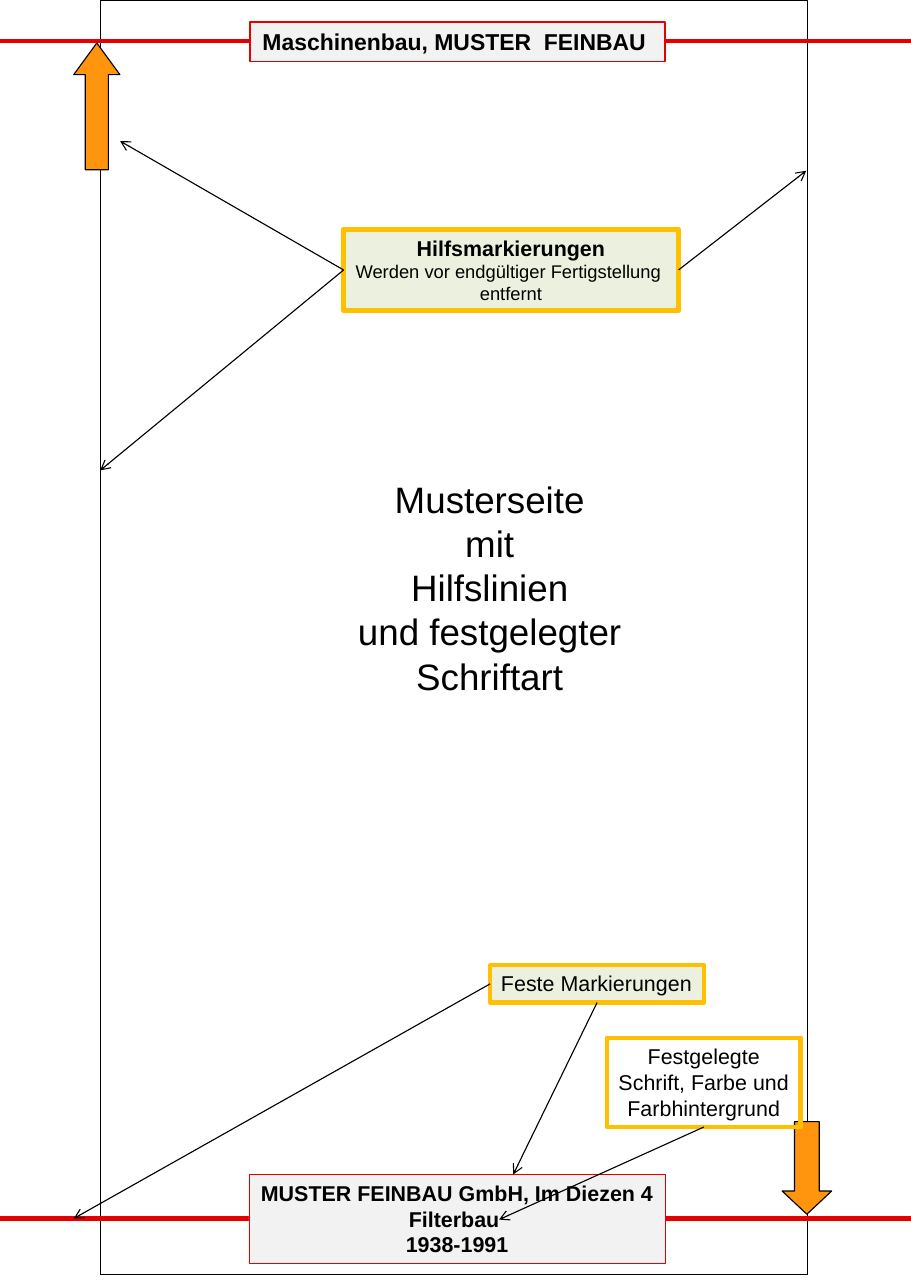
from dataclasses import dataclass

from lxml import etree
from pptx import Presentation
from pptx.dml.color import RGBColor
from pptx.enum.dml import MSO_LINE
from pptx.enum.shapes import MSO_CONNECTOR, MSO_SHAPE
from pptx.enum.text import MSO_ANCHOR, MSO_AUTO_SIZE, PP_ALIGN
from pptx.oxml.ns import qn
from pptx.util import Pt

CENTER, LEFT = PP_ALIGN.CENTER, PP_ALIGN.LEFT
TOP = MSO_ANCHOR.TOP
GROW, FIXED = MSO_AUTO_SIZE.SHAPE_TO_FIT_TEXT, MSO_AUTO_SIZE.NONE
STRAIGHT = MSO_CONNECTOR.STRAIGHT
RECT, UP, DOWN = MSO_SHAPE.RECTANGLE, MSO_SHAPE.UP_ARROW, MSO_SHAPE.DOWN_ARROW
DOTTED = MSO_LINE.ROUND_DOT
SIDE_LEFT, SIDE_BOTTOM, SIDE_RIGHT = 1, 2, 3

FONT = "Arial"
COLORS = {
    "black": "000000", "white": "FFFFFF", "red": "E60000", "grey": "F2F2F2",
    "orange": "FF950E", "green": "EBF1DE", "gold": "FFC000",
}


@dataclass
class Line:
    text: str
    size: float = 14
    bold: bool = False


@dataclass
class Box:
    at: tuple[float, float, float, float]
    lines: list[Line]
    fill: str | None
    line: str
    width: float
    align: int = CENTER


@dataclass
class BlockArrow:
    kind: int
    at: tuple[float, float, float, float]
    head: float


@dataclass
class Pointer:
    box: str
    side: int
    end: tuple[float, float]


def rgb(name: str) -> RGBColor:
    return RGBColor.from_string(COLORS[name])


def write(tf, lines: list[Line], align: int) -> None:
    tf.word_wrap = False
    tf.vertical_anchor = TOP
    for i, line in enumerate(lines):
        p = tf.add_paragraph() if i else tf.paragraphs[0]
        p.alignment = align
        r = p.add_run()
        r.text = line.text
        r.font.name, r.font.size, r.font.bold = FONT, Pt(line.size), line.bold
        r.font.color.rgb = rgb("black")


def outline(sp, color: str, width: float) -> None:
    sp.line.color.rgb = rgb(color)
    sp.line.width = Pt(width)


def add_box(shapes, box: Box):
    sp = shapes.add_textbox(*map(Pt, box.at))
    if box.fill:
        sp.fill.solid()
        sp.fill.fore_color.rgb = rgb(box.fill)
    outline(sp, box.line, box.width)
    write(sp.text_frame, box.lines, box.align)
    sp.text_frame.auto_size = GROW
    return sp


def add_line(shapes, start: tuple[float, float], end: tuple[float, float],
             color: str, width: float):
    cx = shapes.add_connector(STRAIGHT, *map(Pt, start + end))
    outline(cx, color, width)
    etree.SubElement(cx._element.spPr, qn("a:effectLst"))
    return cx


def add_pointer(shapes, sp, pointer: Pointer) -> None:
    cx = add_line(shapes, (0, 0), pointer.end, "black", 0.75)
    cx.begin_connect(sp, pointer.side)
    etree.SubElement(cx.line._get_or_add_ln(), qn("a:tailEnd"), type="arrow")


def add_block_arrow(shapes, arrow: BlockArrow) -> None:
    sp = shapes.add_shape(arrow.kind, *map(Pt, arrow.at))
    sp.adjustments[0], sp.adjustments[1] = 0.5, arrow.head
    sp.shadow.inherit = False
    sp.fill.solid()
    sp.fill.fore_color.rgb = rgb("orange")
    outline(sp, "black", 0.75)


TITLE = ["Musterseite", "mit", "Hilfslinien", "und festgelegter", "Schriftart"]

ARROWS = [
    BlockArrow(DOWN, (511.2, 733, 32.4, 60.5), 0.468),
    BlockArrow(UP, (48.2, 28.1, 30.2, 82.8), 0.686),
]

# Each plate sits on a red rule at the given height
PLATES = [
    (796.3, Box((162.7, 767.5, 272.2, 58.3),
                [Line("MUSTER FEINBAU GmbH, Im Diezen 4", bold=True),
                 Line("Filterbau ", bold=True), Line("1938-1991", bold=True)],
                "grey", "red", 0.57)),
    (26.6, Box((163.4, 14.4, 271.4, 25.9),
               [Line("Maschinenbau, MUSTER  FEINBAU ", 15, True)],
               "grey", "red", 0.85)),
]

NOTES = {
    "guides": Box((224.6, 149.8, 218.9, 53.3),
                  [Line("Hilfsmarkierungen", bold=True),
                   Line("Werden vor endgültiger Fertigstellung ", 12),
                   Line("entfernt", 12)],
                  "green", "gold", 3),
    "fixed": Box((320.4, 630.7, 139.7, 24.5), [Line("Feste Markierungen")],
                 "green", "gold", 3, LEFT),
    "style": Box((396.7, 678.2, 126.7, 58.3),
                 [Line("Festgelegte"), Line("Schrift, Farbe und"),
                  Line("Farbhintergrund")],
                 None, "gold", 3),
}

POINTERS = [
    Pointer("guides", SIDE_RIGHT, (527, 111.6)),
    Pointer("guides", SIDE_LEFT, (78.5, 92.2)),
    Pointer("guides", SIDE_LEFT, (65.5, 307.4)),
    Pointer("fixed", SIDE_BOTTOM, (335.5, 767.5)),
    Pointer("fixed", SIDE_LEFT, (48.2, 796.3)),
    Pointer("style", SIDE_BOTTOM, (326.2, 797)),
]


def main() -> None:
    prs = Presentation()
    prs.slide_width, prs.slide_height = Pt(595.44), Pt(841.68)
    s = prs.slides.add_slide(prs.slide_layouts[5])

    # Title
    sp = s.shapes.title
    sp.left, sp.top, sp.width, sp.height = map(Pt, (190.1, 307.4, 259.9, 97.9))
    sp.fill.solid()
    sp.fill.fore_color.rgb = rgb("white")
    tf = sp.text_frame
    tf.auto_size = FIXED
    tf.margin_left = tf.margin_right = Pt(7.2)
    tf.margin_top = tf.margin_bottom = Pt(4.3)
    write(tf, [Line(text, 24) for text in TITLE], CENTER)

    # Dotted page frame
    frame = s.shapes.add_shape(RECT, *map(Pt, (65.5, 0, 462.2, 833)))
    frame.shadow.inherit = False
    frame.fill.background()
    outline(frame, "black", 0.25)
    frame.line.dash_style = DOTTED

    # Block arrows
    for arrow in ARROWS:
        add_block_arrow(s.shapes, arrow)

    # Header and footer
    for y, plate in PLATES:
        group = s.shapes.add_group_shape()
        add_line(group.shapes, (0, y), (597.6, y), "red", 2.83)
        add_box(group.shapes, plate)

    # Notes and their pointers
    notes = {name: add_box(s.shapes, box) for name, box in NOTES.items()}
    for pointer in POINTERS:
        add_pointer(s.shapes, notes[pointer.box], pointer)

    prs.save("out.pptx")


if __name__ == "__main__":
    main()
